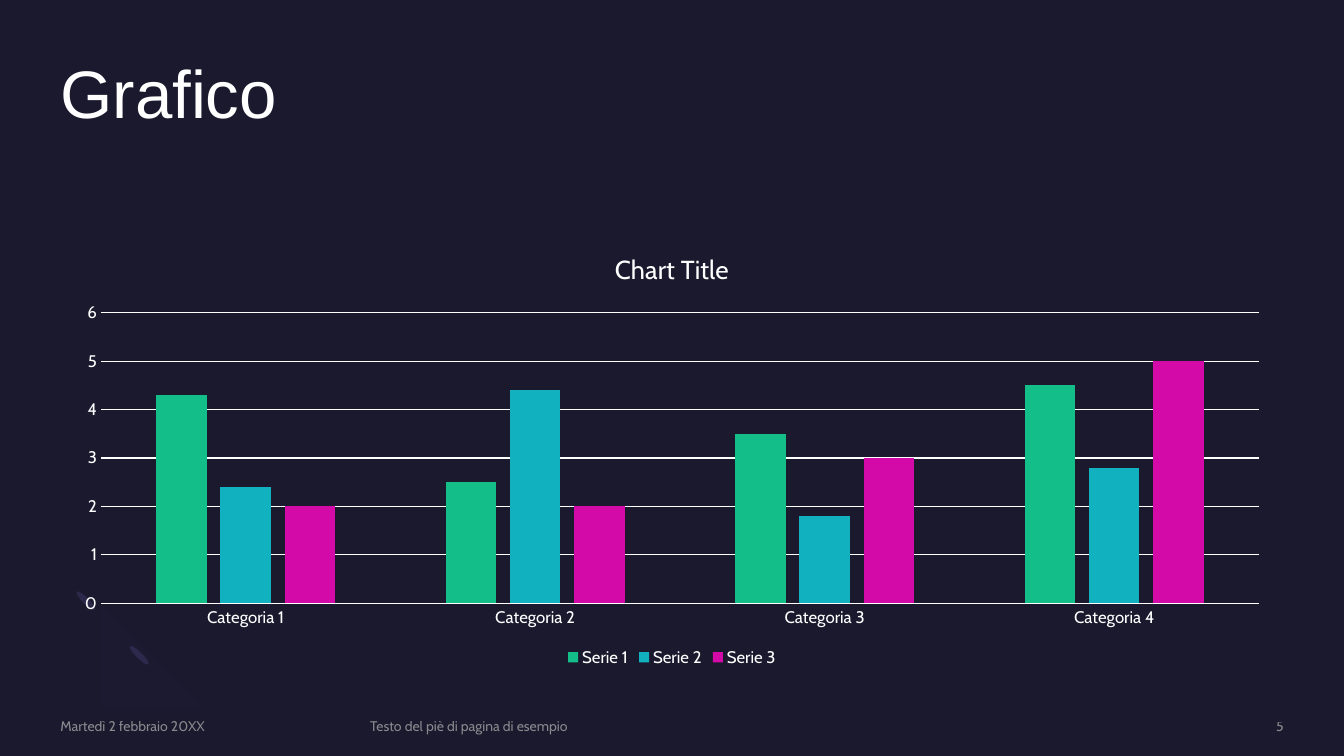
import pptx
import pptx.util
import pptx.chart.data
import pptx.dml.color
import pptx.enum.chart
import pptx.enum.shapes
import pptx.enum.text
import pptx.oxml

Inches = pptx.util.Inches
Pt = pptx.util.Pt
RGBColor = pptx.dml.color.RGBColor
Align = pptx.enum.text.PP_ALIGN

TITLE = "Grafico"
CHART_TITLE = "Chart Title"
CATEGORIES = ["Categoria 1", "Categoria 2", "Categoria 3", "Categoria 4"]

NIGHT = RGBColor(0x1B, 0x19, 0x2E)
WHITE = RGBColor(0xFF, 0xFF, 0xFF)
GREY = RGBColor(0xA6, 0xA6, 0xA6)
INDIGO = RGBColor(0x2C, 0x28, 0x4A)
LILAC = RGBColor(0x77, 0x71, 0xB2)
GREEN = RGBColor(0x13, 0xBE, 0x89)
TEAL = RGBColor(0x12, 0xB1, 0xBF)
MAGENTA = RGBColor(0xD4, 0x0A, 0xA8)

SERIES = [
    ("Serie 1", [4.3, 2.5, 3.5, 4.5], GREEN),
    ("Serie 2", [2.4, 4.4, 1.8, 2.8], TEAL),
    ("Serie 3", [2, 2, 3, 5], MAGENTA),
]
# text, left, width, alignment
FOOTERS = [
    ("Martedì 2 febbraio 20XX", 0.6, 2.88, Align.LEFT),
    ("Testo del piè di pagina di esempio", 3.67, 6.98, Align.LEFT),
    ("5", 10.88, 1.85, Align.RIGHT),
]
FOOTER_TOP, FOOTER_HEIGHT = 7.12, 0.17
LEFT, WIDTH = 0.6, 12.13
ELLIPSES = [(1.35, 6.37), (0.82, 5.83)]
# Bezier curves of the ring: outer edge, then inner edge
RING = [
    [(1.52, 6.54), (1.3, 6.76), (0.95, 6.79), (0.76, 6.59)],
    [(0.76, 6.59), (0.56, 6.39), (0.58, 6.05), (0.81, 5.82)],
    [(0.99, 6.0), (0.87, 6.11), (0.86, 6.29), (0.96, 6.38)],
    [(0.96, 6.38), (1.06, 6.48), (1.23, 6.47), (1.35, 6.36)],
]
CURVE_STEPS = 12


def set_opacity(element, percent):
    for color in element.xpath(".//a:solidFill/a:srgbClr"):
        alpha = pptx.oxml.parse_xml(
            '<a:alpha xmlns:a="http://schemas.openxmlformats.org/drawingml/2006/main"'
            f' val="{percent * 1000}"/>')
        color.append(alpha)


def style_font(font, size, color=WHITE, name="Cabin"):
    font.size = Pt(size)
    font.name = name
    font.color.rgb = color
    font.bold = False


def clear_margins(frame):
    frame.margin_left = frame.margin_right = 0
    frame.margin_top = frame.margin_bottom = 0
    frame.word_wrap = True


def fill_plain(shape, color):
    shape.shadow.inherit = False
    shape.fill.solid()
    shape.fill.fore_color.rgb = color
    shape.line.fill.background()


def curve_point(curve, t):
    weights = ((1 - t) ** 3, 3 * t * (1 - t) ** 2, 3 * t ** 2 * (1 - t), t ** 3)
    return tuple(sum(w * point[axis] for w, point in zip(weights, curve))
                 for axis in (0, 1))


def add_decoration(slide):
    for left, top in ELLIPSES:
        ellipse = slide.shapes.add_shape(
            pptx.enum.shapes.MSO_SHAPE.OVAL,
            Inches(left), Inches(top), Inches(0.06), Inches(0.26))
        ellipse.rotation = 135
        fill_plain(ellipse, INDIGO)
    points = [curve_point(curve, step / CURVE_STEPS)
              for curve in RING for step in range(CURVE_STEPS + 1)]
    builder = slide.shapes.build_freeform(*points[0], scale=Inches(1))
    builder.add_line_segments(points[1:], close=True)
    ring = builder.convert_to_shape()
    fill_plain(ring, LILAC)
    set_opacity(ring._element, 2)


def add_title(slide):
    title = slide.shapes.title
    title.left, title.top = Inches(LEFT), Inches(0.6)
    title.width, title.height = Inches(WIDTH), Inches(1.46)
    frame = title.text_frame
    frame.text = TITLE
    clear_margins(frame)
    frame.vertical_anchor = pptx.enum.text.MSO_ANCHOR.TOP
    paragraph = frame.paragraphs[0]
    paragraph.alignment = Align.LEFT
    paragraph.line_spacing = 0.9
    style_font(paragraph.runs[0].font, 48, name="Arial")


def add_column_chart(slide):
    data = pptx.chart.data.CategoryChartData()
    data.categories = CATEGORIES
    for name, values, _ in SERIES:
        data.add_series(name, values)
    chart = slide.shapes.add_chart(
        pptx.enum.chart.XL_CHART_TYPE.COLUMN_CLUSTERED,
        Inches(LEFT), Inches(2.31), Inches(WIDTH), Inches(4.35), data).chart
    style_font(chart.font, 10)

    chart.has_title = True
    chart.chart_title.include_in_layout = False
    chart.chart_title.text_frame.text = CHART_TITLE
    style_font(chart.chart_title.text_frame.paragraphs[0].runs[0].font, 18.6)

    chart.has_legend = True
    chart.legend.position = pptx.enum.chart.XL_LEGEND_POSITION.BOTTOM
    chart.legend.include_in_layout = False
    style_font(chart.legend.font, 12)

    plot = chart.plots[0]
    plot.gap_width = 219
    plot.overlap = -27
    plot.vary_by_categories = False
    for series, (_, _, color) in zip(plot.series, SERIES):
        series.format.fill.solid()
        series.format.fill.fore_color.rgb = color

    for axis in (chart.category_axis, chart.value_axis):
        axis.major_tick_mark = pptx.enum.chart.XL_TICK_MARK.NONE
        axis.minor_tick_mark = pptx.enum.chart.XL_TICK_MARK.NONE
        style_font(axis.tick_labels.font, 12)
    value_axis = chart.value_axis
    value_axis.minimum_scale, value_axis.maximum_scale = 0, 6
    value_axis.major_unit = 1
    value_axis.format.line.fill.background()
    for line in (chart.category_axis.format.line,
                 value_axis.major_gridlines.format.line):
        line.color.rgb = WHITE
        line.width = Pt(0.75)


def add_footers(slide):
    for text, left, width, alignment in FOOTERS:
        box = slide.shapes.add_textbox(
            Inches(left), Inches(FOOTER_TOP), Inches(width), Inches(FOOTER_HEIGHT))
        frame = box.text_frame
        frame.text = text
        clear_margins(frame)
        frame.vertical_anchor = pptx.enum.text.MSO_ANCHOR.MIDDLE
        paragraph = frame.paragraphs[0]
        paragraph.alignment = alignment
        style_font(paragraph.runs[0].font, 10, GREY)
        set_opacity(box._element, 80)


def main():
    presentation = pptx.Presentation()
    presentation.slide_width = Inches(13.33)
    presentation.slide_height = Inches(7.5)
    slide = presentation.slides.add_slide(
        presentation.slide_layouts.get_by_name("Title Only"))
    slide.background.fill.solid()
    slide.background.fill.fore_color.rgb = NIGHT
    add_decoration(slide)
    add_title(slide)
    add_column_chart(slide)
    add_footers(slide)
    presentation.save("out.pptx")


if __name__ == "__main__":
    main()
